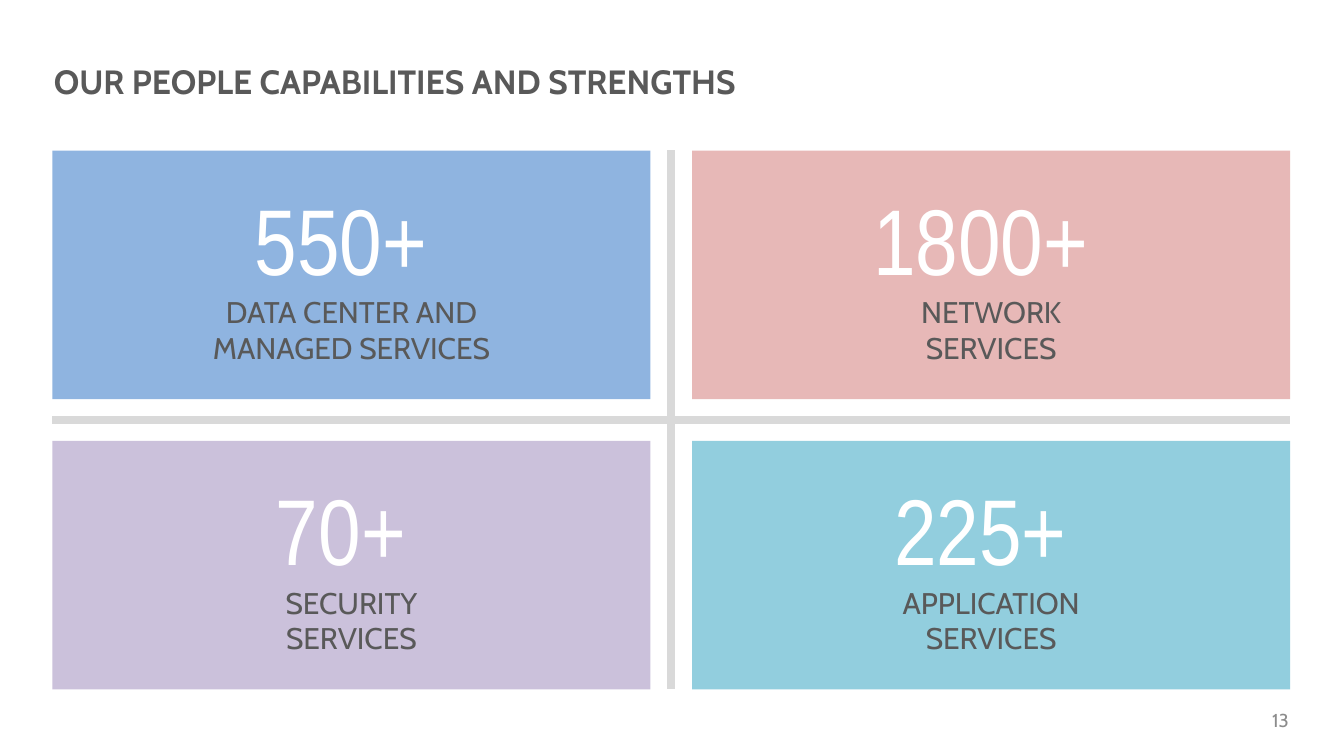
from pptx import Presentation
from pptx.dml.color import RGBColor
from pptx.enum.shapes import MSO_CONNECTOR, MSO_SHAPE
from pptx.enum.text import MSO_ANCHOR, MSO_AUTO_SIZE, PP_ALIGN
from pptx.oxml.ns import qn
from pptx.util import Inches, Pt
from lxml import etree

RECT = MSO_SHAPE.RECTANGLE
STRAIGHT = MSO_CONNECTOR.STRAIGHT
MIDDLE = MSO_ANCHOR.MIDDLE
GROW = MSO_AUTO_SIZE.SHAPE_TO_FIT_TEXT
LEFT, CENTER, RIGHT = PP_ALIGN.LEFT, PP_ALIGN.CENTER, PP_ALIGN.RIGHT

WHITE = RGBColor(0xFF, 0xFF, 0xFF)
DARK = RGBColor(0x59, 0x59, 0x59)
GREY = RGBColor(0x8C, 0x8C, 0x8C)
RULE = RGBColor(0xD9, 0xD9, 0xD9)
BLUE = RGBColor(0x8F, 0xB4, 0xE0)
PINK = RGBColor(0xE7, 0xB8, 0xB7)
LILAC = RGBColor(0xCB, 0xC1, 0xDB)
TEAL = RGBColor(0x92, 0xCE, 0xDE)

# Content
TITLE = "OUR PEOPLE CAPABILITIES AND STRENGTHS"
PAGE = "13"
CARDS = [  # row by row: figure, label lines, fill
    ("550+ ", ["DATA CENTER AND MANAGED SERVICES"], BLUE),
    ("1800+ ", ["NETWORK", "SERVICES"], PINK),
    ("70+ ", ["SECURITY", "SERVICES"], LILAC),
    ("225+ ", ["APPLICATION", "SERVICES"], TEAL),
]

# Grid, in inches
COLS = 2
X0, Y0 = 0.39, 1.12
CARD_W, CARD_H = 4.45, 1.85
STEP_X, STEP_Y = 4.76, 2.16
TEXT_W, TEXT_H = 2.62, 1.48
X1, Y1 = X0 + STEP_X + CARD_W, Y0 + STEP_Y + CARD_H
MID_X, MID_Y = (X0 + X1) / 2, (Y0 + Y1) / 2


def add_run(p, text, size, color, font="Cabin", bold=False):
    r = p.add_run()
    r.text = text
    r.font.name, r.font.size, r.font.bold = font, Pt(size), bold
    r.font.color.rgb = color


def add_rule(x1, y1, x2, y2):
    line = slide.shapes.add_connector(
        STRAIGHT, Inches(x1), Inches(y1), Inches(x2), Inches(y2))
    line.line.color.rgb = RULE
    line.line.width = Pt(4.25)
    etree.SubElement(line._element.spPr, qn("a:effectLst"))


def add_text_box(x, y, w, h):
    box = slide.shapes.add_textbox(Inches(x), Inches(y), Inches(w), Inches(h))
    box.text_frame.word_wrap = True
    return box.text_frame


def add_card(x, y, figure, label, fill):
    sp = slide.shapes.add_shape(
        RECT, Inches(x), Inches(y), Inches(CARD_W), Inches(CARD_H))
    sp.shadow.inherit = False
    sp.fill.solid()
    sp.fill.fore_color.rgb = fill
    sp.line.fill.background()

    tf = add_text_box(x + (CARD_W - TEXT_W) / 2, y + (CARD_H - TEXT_H) / 2,
                      TEXT_W, TEXT_H)
    tf.auto_size = GROW
    p = tf.paragraphs[0]
    p.alignment = CENTER
    add_run(p, figure, 50, WHITE, "Arial Narrow")
    p = tf.add_paragraph()
    p.alignment = CENTER
    for i, text in enumerate(label):
        if i:
            p.add_line_break()
        add_run(p, text, 16, DARK)


prs = Presentation()
prs.slide_width = Inches(10)
prs.slide_height = prs.slide_width * 9 // 16
slide = prs.slides.add_slide(prs.slide_layouts[5])

# Title
title = slide.shapes.title
title.left, title.top = Inches(0.4), Inches(0.4)
title.width, title.height = Inches(8.24), Inches(0.4)
tf = title.text_frame
tf.margin_left = 0
tf.vertical_anchor = MIDDLE
tf.auto_size = GROW
p = tf.paragraphs[0]
p.alignment = LEFT
add_run(p, TITLE, 18, DARK, bold=True)

# Cross rules between the cards
add_rule(MID_X, Y0, MID_X, Y1)
add_rule(X0, MID_Y, X1, MID_Y)

# Cards
for i, card in enumerate(CARDS):
    row, col = divmod(i, COLS)
    add_card(X0 + col * STEP_X, Y0 + row * STEP_Y, *card)

# Page number
tf = add_text_box(9.06, 5.21, 0.53, 0.3)
tf.margin_right = 0
tf.vertical_anchor = MIDDLE
p = tf.paragraphs[0]
p.alignment = RIGHT
add_run(p, PAGE, 10, GREY)

prs.save("out.pptx")
